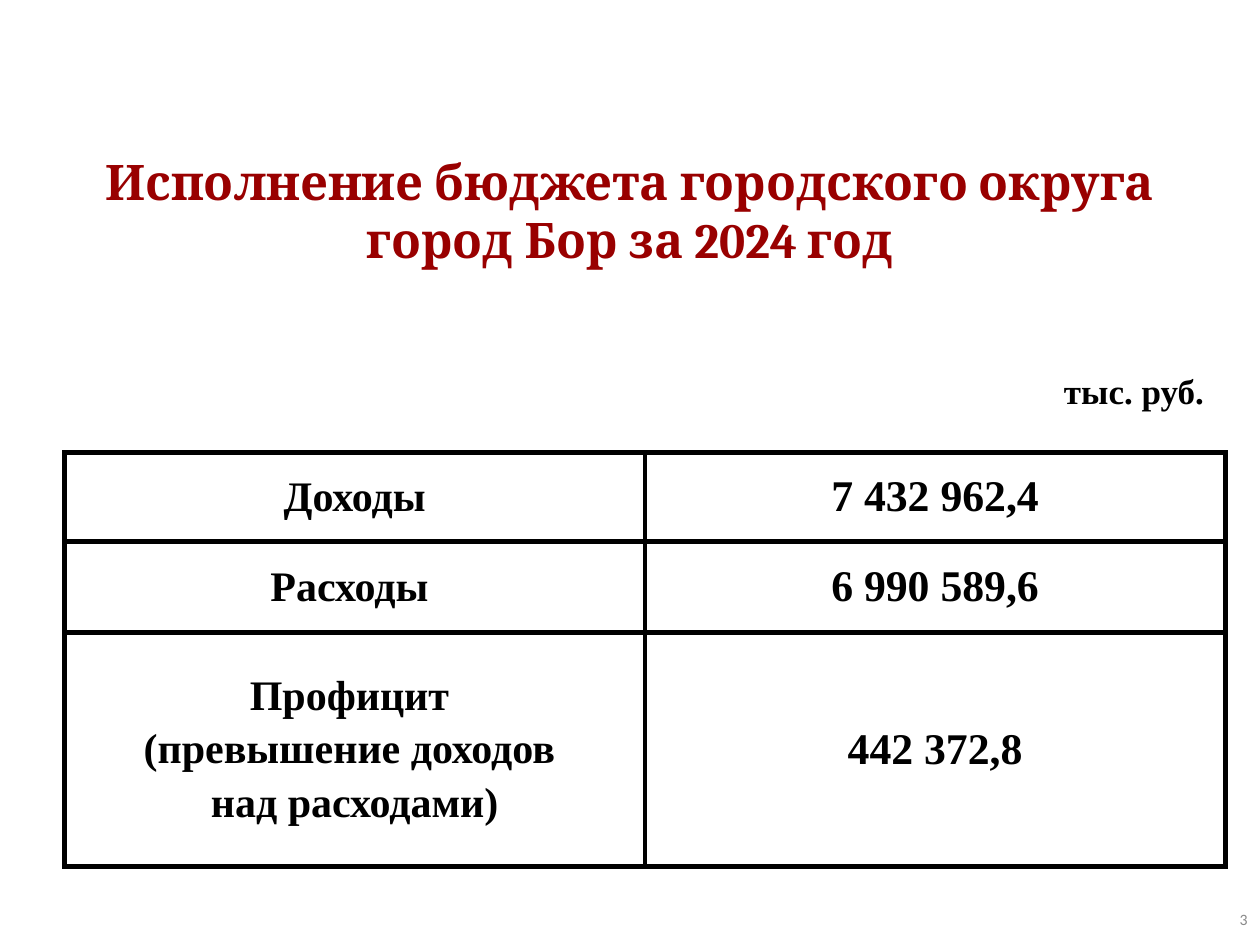
from dataclasses import dataclass

from lxml.etree import SubElement
from pptx import Presentation
from pptx.dml.color import RGBColor
from pptx.enum.text import MSO_VERTICAL_ANCHOR as Anchor, PP_PARAGRAPH_ALIGNMENT as Align
from pptx.oxml.ns import qn
from pptx.slide import Slide
from pptx.table import _Cell as Cell
from pptx.text.text import TextFrame
from pptx.util import Cm, Length, Pt


@dataclass(frozen=True)
class TextStyle:
    font: str
    size: float
    color: str
    bold: bool = True


@dataclass(frozen=True)
class Theme:
    title: TextStyle = TextStyle("Cambria", 28, "990000")
    unit: TextStyle = TextStyle("Times New Roman", 20, "000000")
    label: TextStyle = TextStyle("Times New Roman", 24, "000000")
    amount: TextStyle = TextStyle("Times New Roman", 25, "000000")
    page: TextStyle = TextStyle("Calibri", 9, "898989", False)
    border: str = "000000"
    border_width: Length = Pt(3)
    line_gap: Length = Pt(4)


@dataclass(frozen=True)
class TextBox:
    text: str
    style: TextStyle
    left: float
    top: float
    width: float
    height: float
    align: Align
    anchor: Anchor = Anchor.TOP


@dataclass(frozen=True)
class BudgetRow:
    label_lines: tuple[str, ...]
    amount: str
    height: float


THEME = Theme()

TEXT_BOXES = (
    TextBox("Исполнение бюджета городского округа город Бор за 2024 год",
            THEME.title, 0.9, 2.92, 23.6, 2.8, Align.CENTER),
    TextBox("тыс. руб. ", THEME.unit, 12.5, 7.32, 12.2, 1.2, Align.RIGHT),
    TextBox("3", THEME.page, 19.7, 18.03, 5.7, 1.02, Align.RIGHT, Anchor.MIDDLE),
)

# A trailing space shifts a centred label slightly to the left.
BUDGET_ROWS = (
    BudgetRow(("Доходы",), "7 432 962,4", 1.8),
    BudgetRow(("Расходы ",), "6 990 589,6", 1.83),
    BudgetRow(("Профицит ", "(превышение доходов ", "над расходами)"),
              "442 372,8", 4.72),
)
TABLE_LEFT, TABLE_TOP, COLUMN_WIDTH = 1.3, 9.12, 11.7


def write_lines(frame: TextFrame, lines: tuple[str, ...], style: TextStyle, align: Align) -> None:
    for index, line in enumerate(lines):
        paragraph = frame.add_paragraph() if index else frame.paragraphs[0]
        paragraph.alignment = align
        paragraph.space_before = THEME.line_gap if index else Pt(0)
        run = paragraph.add_run()
        run.text = line
        run.font.name = style.font
        run.font.size = Pt(style.size)
        run.font.bold = style.bold
        run.font.color.rgb = RGBColor.from_string(style.color)


def add_text_box(slide: Slide, box: TextBox) -> None:
    shape = slide.shapes.add_textbox(Cm(box.left), Cm(box.top), Cm(box.width), Cm(box.height))
    frame = shape.text_frame
    frame.word_wrap = True
    frame.vertical_anchor = box.anchor
    write_lines(frame, (box.text,), box.style, box.align)


def set_borders(cell: Cell) -> None:
    properties = cell._tc.get_or_add_tcPr()
    for index, side in enumerate(("lnL", "lnR", "lnT", "lnB")):
        line = properties.makeelement(qn(f"a:{side}"), {"w": str(int(THEME.border_width))})
        properties.insert(index, line)
        fill = SubElement(line, qn("a:solidFill"))
        SubElement(fill, qn("a:srgbClr"), val=THEME.border)


def fill_cell(cell: Cell, lines: tuple[str, ...], style: TextStyle) -> None:
    cell.margin_left = cell.margin_right = cell.margin_top = cell.margin_bottom = Cm(0)
    cell.vertical_anchor = Anchor.MIDDLE
    cell.fill.background()
    set_borders(cell)
    write_lines(cell.text_frame, lines, style, Align.CENTER)


def add_budget_table(slide: Slide, rows: tuple[BudgetRow, ...]) -> None:
    height = sum(row.height for row in rows)
    table = slide.shapes.add_table(len(rows), 2, Cm(TABLE_LEFT), Cm(TABLE_TOP),
                                   Cm(2 * COLUMN_WIDTH), Cm(height)).table
    table.first_row = table.horz_banding = False
    for column in table.columns:
        column.width = Cm(COLUMN_WIDTH)
    for index, row in enumerate(rows):
        table.rows[index].height = Cm(row.height)
        fill_cell(table.cell(index, 0), row.label_lines, THEME.label)
        fill_cell(table.cell(index, 1), (row.amount,), THEME.amount)


def main() -> None:
    presentation = Presentation()
    presentation.slide_width, presentation.slide_height = Cm(25.4), Cm(19.05)
    slide = presentation.slides.add_slide(presentation.slide_layouts[6])
    for box in TEXT_BOXES:
        add_text_box(slide, box)
    add_budget_table(slide, BUDGET_ROWS)
    presentation.save("out.pptx")


if __name__ == "__main__":
    main()
